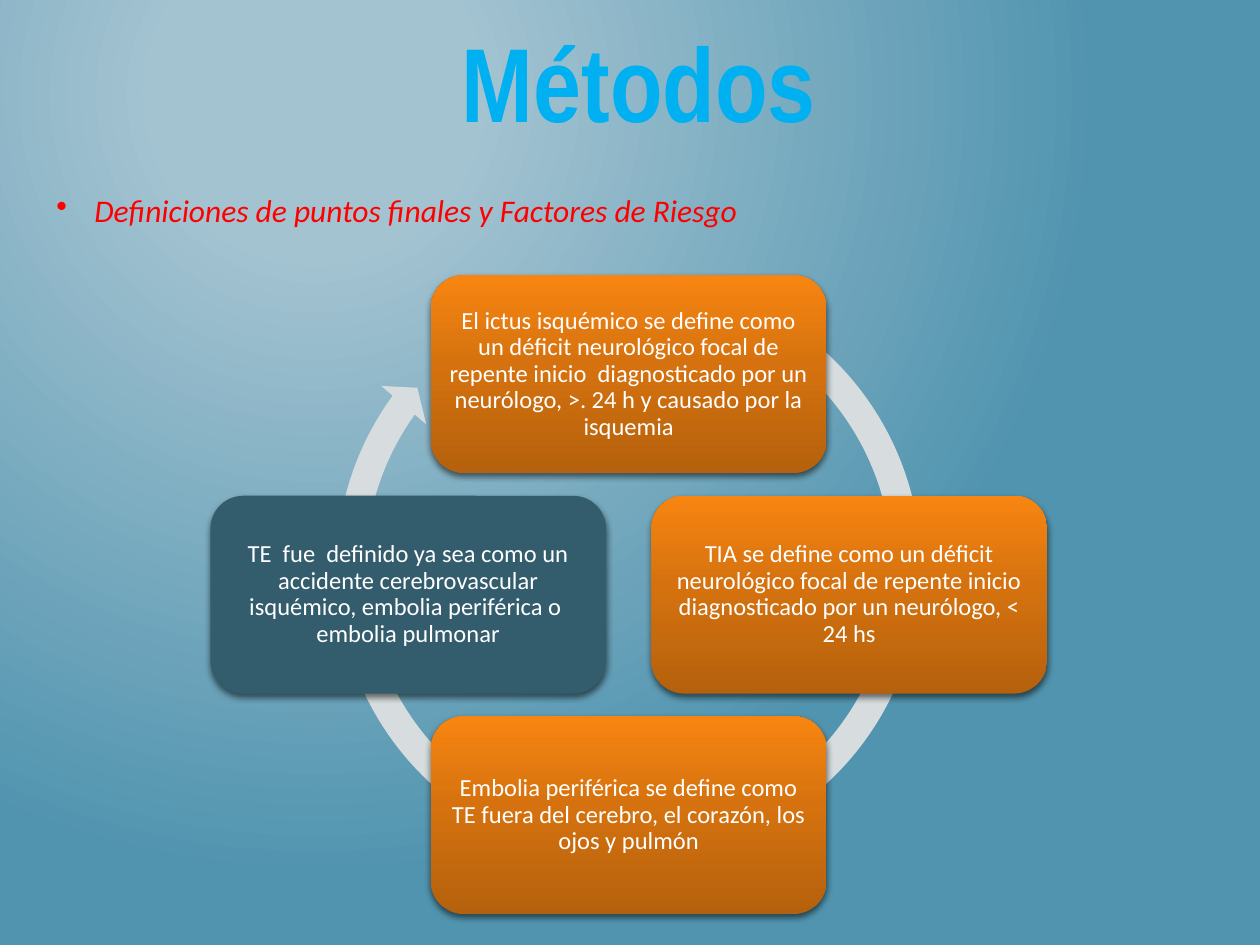
from pptx import Presentation
from pptx.dml.color import RGBColor
from pptx.enum.shapes import MSO_SHAPE
from pptx.enum.text import MSO_ANCHOR, PP_ALIGN
from pptx.oxml import parse_xml
from pptx.oxml.ns import nsdecls, qn
from pptx.util import Inches, Pt

TITLE = "Métodos"
SUBTITLE = "Definiciones de puntos finales y Factores de Riesgo"
ORANGE = [(0, "B5610D"), (55, "D5720F"), (100, "F88511")]
BACKDROP = [(20, "A3C3D1"), (100, "5194AF")]
STEPS = [
    ("El ictus isquémico se define como un déficit neurológico focal de repente inicio  "
     "diagnosticado por un neurólogo, >. 24 h y causado por la isquemia", (0, -1), ORANGE),
    ("TIA se define como un déficit neurológico focal de repente inicio diagnosticado "
     "por un neurólogo, < 24 hs", (1, 0), ORANGE),
    ("Embolia periférica se define como TE fuera del cerebro, el corazón, los ojos y pulmón",
     (0, 1), ORANGE),
    ("TE  fue  definido ya sea como un accidente cerebrovascular isquémico, embolia "
     "periférica o  embolia pulmonar", (-1, 0), "335D6D"),
]
CENTER_X, CENTER_Y, RADIUS = 4.99, 4.72, 1.75
BOX_W, BOX_H = 3.14, 1.57
RING, RING_TOP = 4.88, 2.07
RING_ADJ = [0.047, 2.729, 129.568, 179.459, 0.048]


def color(value):
    return RGBColor.from_string(value)


def place(sp, *box):
    sp.left, sp.top, sp.width, sp.height = map(Inches, box)


def gradient(fill, owner, stops, direction):
    fill.gradient()
    old = next(owner.iter(qn("a:gradFill")))
    gs = "".join(f'<a:gs pos="{pos * 1000}"><a:srgbClr val="{c}"/></a:gs>' for pos, c in stops)
    old.getparent().replace(old, parse_xml(
        f'<a:gradFill {nsdecls("a")} rotWithShape="1"><a:gsLst>{gs}</a:gsLst>{direction}</a:gradFill>'))


def paint(sp, paint_with):
    sp.shadow.inherit = False
    sp.line.fill.background()
    if isinstance(paint_with, str):
        sp.fill.solid()
        sp.fill.fore_color.rgb = color(paint_with)
    else:
        gradient(sp.fill, sp._element, paint_with, '<a:lin ang="16200000" scaled="0"/>')


def add_shadow(sp):
    effects = sp._element.spPr.find(qn("a:effectLst"))
    effects.append(parse_xml(
        f'<a:outerShdw {nsdecls("a")} blurRad="{Pt(4)}" dist="{Pt(2)}" dir="5400000" rotWithShape="0">'
        '<a:srgbClr val="000000"><a:alpha val="55000"/></a:srgbClr></a:outerShdw>'))


def write(sp, text, font, size, ink, align=PP_ALIGN.CENTER, anchor=MSO_ANCHOR.MIDDLE):
    tf = sp.text_frame
    tf.word_wrap = True
    tf.vertical_anchor = anchor
    p = tf.paragraphs[0]
    p.text = text
    p.alignment = align
    p.font.name, p.font.size, p.font.color.rgb = font, Pt(size), color(ink)
    return p


prs = Presentation()
prs.slide_width, prs.slide_height = Inches(10), Inches(7.5)
s = prs.slides.add_slide(prs.slide_layouts[5])
gradient(s.background.fill, s._element, BACKDROP,
         '<a:path path="circle"><a:fillToRect l="50000" t="20000" r="100000" b="100000"/></a:path>')

title = s.shapes.title
place(title, 1.84, 0.13, 6.46, 1.02)
write(title, TITLE, "Arial Narrow", 60, "00B0F0").font.bold = True

subtitle = s.shapes.add_textbox(0, 0, 0, 0)
place(subtitle, 0.35, 1.47, 8.67, 0.5)
p = write(subtitle, SUBTITLE, "Calibri", 18, "FF0000", PP_ALIGN.LEFT, MSO_ANCHOR.TOP)
p.font.italic = True
p.space_before = Pt(3.6)
pPr = p._p.get_or_add_pPr()
pPr.set("marL", str(Inches(0.3)))
pPr.set("indent", str(Inches(-0.3)))
bullet = parse_xml(f'<a:buChar {nsdecls("a")} char="•"/>')
pPr.insert_element_before(bullet, "a:tabLst", "a:defRPr", "a:extLst")

ring = s.shapes.add_shape(MSO_SHAPE.CIRCULAR_ARROW, 0, 0, 0, 0)
place(ring, CENTER_X - RING / 2, RING_TOP, RING, RING)
for i, value in enumerate(RING_ADJ):
    ring.adjustments[i] = value
paint(ring, "D7DDDE")

for text, (dx, dy), paint_with in STEPS:
    box = s.shapes.add_shape(MSO_SHAPE.ROUNDED_RECTANGLE, 0, 0, 0, 0)
    place(box, CENTER_X + dx * RADIUS - BOX_W / 2, CENTER_Y + dy * RADIUS - BOX_H / 2, BOX_W, BOX_H)
    paint(box, paint_with)
    add_shadow(box)
    tf = box.text_frame
    tf.margin_left = tf.margin_right = tf.margin_top = tf.margin_bottom = Inches(0.06)
    write(box, text, "Calibri", 14, "FFFFFF").line_spacing = 0.9

prs.save("out.pptx")
